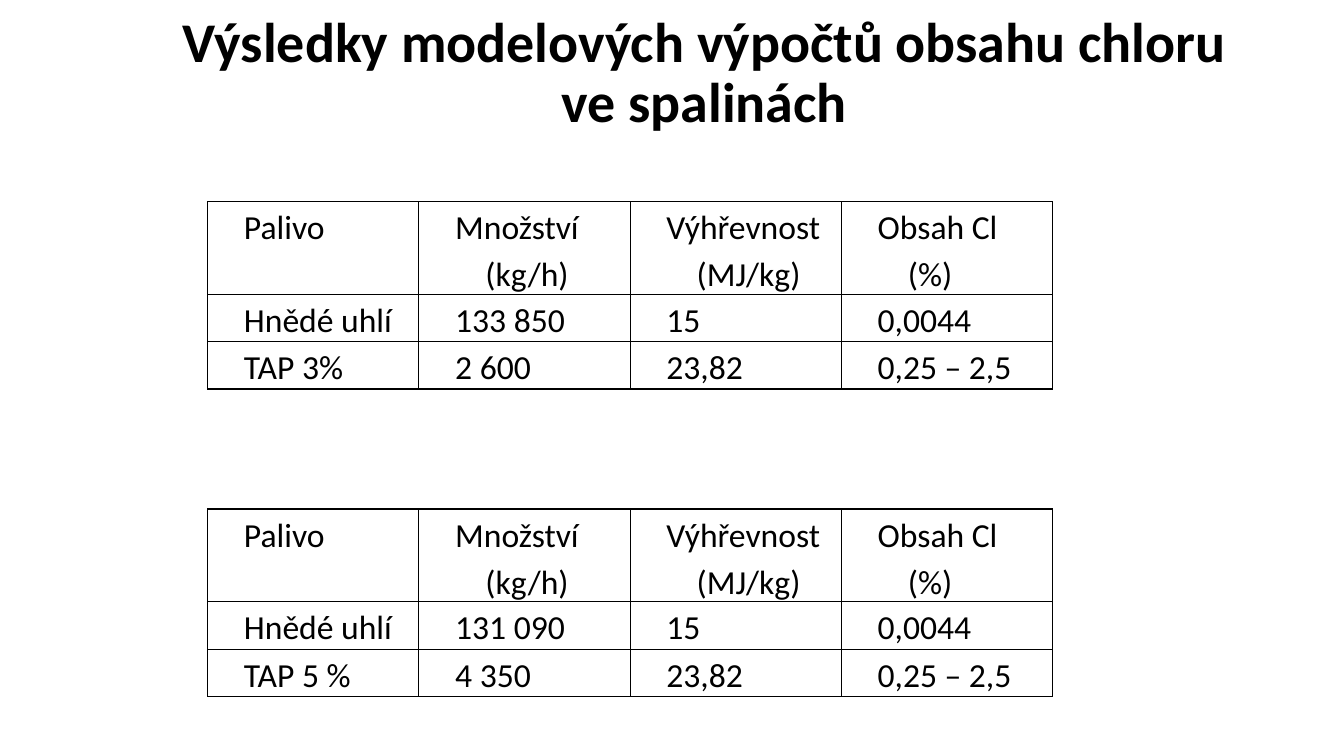
from lxml.etree import SubElement
from pptx import Presentation
from pptx.dml.color import RGBColor as Rgb
from pptx.enum.text import MSO_ANCHOR as Anchor, PP_ALIGN as Align
from pptx.oxml.ns import qn
from pptx.util import Inches, Pt

COLORS = {"ink": "000000"}
FONT = "Calibri"
COLUMN_WIDTH = 8.38 / 4
ROW_HEIGHTS = (0.9, 0.47, 0.47)
HEADER = ("Palivo", "Množství (kg/h)", "Výhřevnost (MJ/kg)", "Obsah Cl (%)")
FUEL_MIXES = {
    2.0: (HEADER,
          ("Hnědé uhlí", "133 850", "15", "0,0044"),
          ("TAP 3%", "2 600", "23,82", "0,25 – 2,5")),
    5.05: (HEADER,
           ("Hnědé uhlí", "131 090", "15", "0,0044"),
           ("TAP 5 %", "4 350", "23,82", "0,25 – 2,5")),
}


def style_text(paragraph, size, spacing, bold=False):
    paragraph.line_spacing = spacing
    font = paragraph.font
    font.name, font.size, font.bold = FONT, Pt(size), bold
    font.color.rgb = Rgb.from_string(COLORS["ink"])


def border_cell(cell):
    """Draw a 1 pt line on all four sides; must run before the fill is set."""
    properties = cell._tc.get_or_add_tcPr()
    for side in ("a:lnL", "a:lnR", "a:lnT", "a:lnB"):
        line = SubElement(properties, qn(side), w=str(Pt(1)))
        solid = SubElement(line, qn("a:solidFill"))
        SubElement(solid, qn("a:srgbClr"), val=COLORS["ink"])


prs = Presentation()
prs.slide_width, prs.slide_height = Inches(13.33), Inches(7.5)
slide = prs.slides.add_slide(prs.slide_layouts[6])

# Title
title = slide.shapes.add_textbox(
    Inches(1.43), Inches(-0.15), Inches(11.11), Inches(2.15)).text_frame
title.word_wrap = True
title.vertical_anchor = Anchor.BOTTOM
title.margin_bottom = Inches(0.66)
heading = title.paragraphs[0]
heading.text = "Výsledky modelových výpočtů obsahu chloru ve spalinách"
heading.alignment = Align.CENTER
style_text(heading, 40, 0.9, bold=True)

# Fuel tables
for top, fuel_rows in FUEL_MIXES.items():
    fuels = slide.shapes.add_table(
        len(fuel_rows), len(HEADER), Inches(2.06), Inches(top),
        Inches(COLUMN_WIDTH * len(HEADER)), Inches(sum(ROW_HEIGHTS))).table
    fuels.first_row = fuels.horz_banding = False
    for column in fuels.columns:
        column.width = Inches(COLUMN_WIDTH)
    for row, height, values in zip(fuels.rows, ROW_HEIGHTS, fuel_rows):
        row.height = Inches(height)
        for cell, value in zip(row.cells, values):
            cell.margin_left = cell.margin_right = Inches(0.07)
            cell.margin_top = cell.margin_bottom = 0
            border_cell(cell)
            cell.fill.background()
            entry = cell.text_frame.paragraphs[0]
            entry.text = value
            style_text(entry, 24, 1.15)
            indents = entry._p.get_or_add_pPr()
            indents.set("marL", str(Inches(0.59)))
            indents.set("indent", str(Inches(-0.3)))

prs.save("out.pptx")
